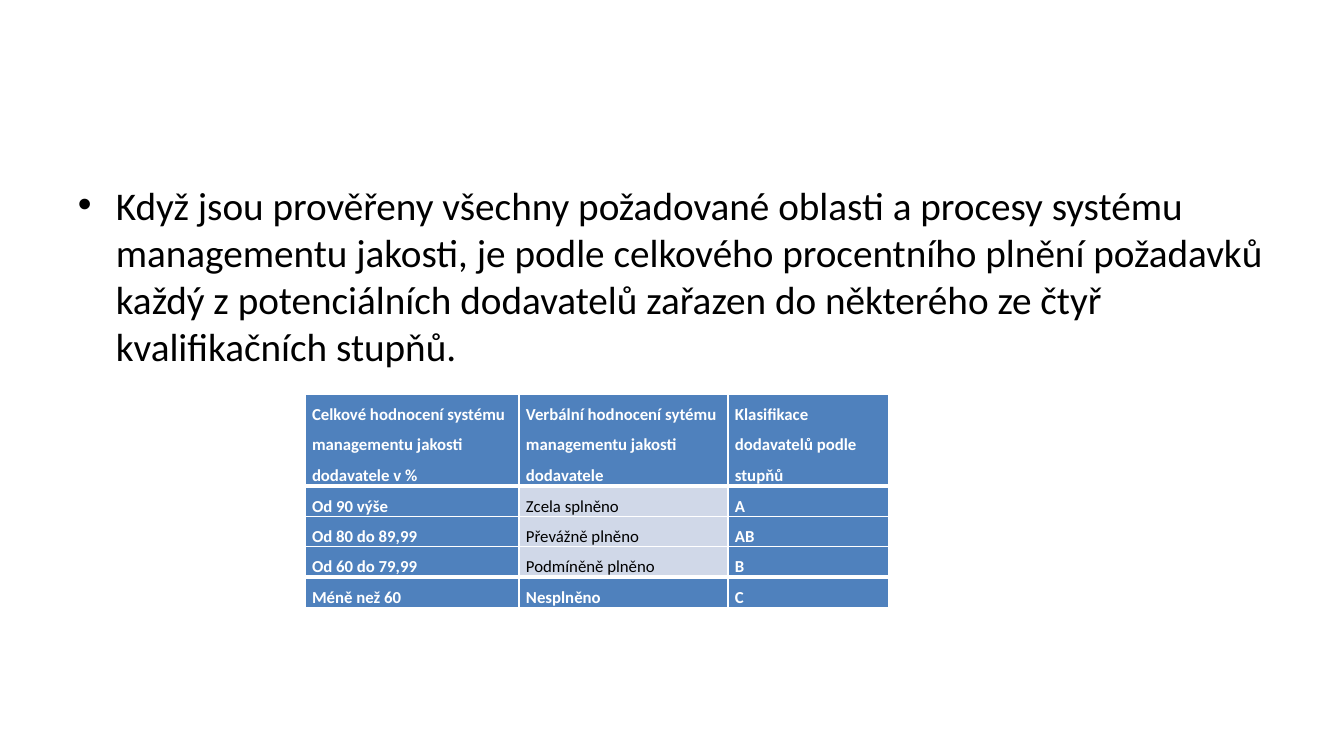
"""Build the slide on supplier rating with its table of four grades."""
from lxml import etree
from pptx import Presentation, util as u
from pptx.dml.color import RGBColor
from pptx.enum import text as t
from pptx.oxml import ns

PX = 914400 / 100.8
HUE = {"ink": "000000", "white": "FFFFFF", "blue": "4F81BD", "pale": "D0D8E8"}


def px(n):
    return u.Emu(round(n * PX))


def write(frame, words, size=12, hue="white", bold=False, line=None, after=0, bullet=None):
    frame.word_wrap = True
    para = frame.paragraphs[0]
    para.alignment = t.PP_ALIGN.LEFT
    para.space_after = u.Pt(after)
    if line:
        para.line_spacing = line
    if bullet:
        props = para._p.get_or_add_pPr()
        props.set("marL", str(px(38)))
        props.set("indent", str(-px(38)))
        font = etree.SubElement(props, ns.qn("a:buFont"))
        font.set("typeface", "Arial")
        etree.SubElement(props, ns.qn("a:buChar")).set("char", bullet)
    run = para.add_run()
    run.text = words
    run.font.name = "Calibri"
    run.font.size = u.Pt(size)
    run.font.bold = bold
    run.font.color.rgb = RGBColor.from_string(HUE[hue])


deck = Presentation()
deck.slide_width, deck.slide_height = px(1344), px(756)
slide = deck.slides.add_slide(deck.slide_layouts[6])

body = slide.shapes.add_textbox(px(68), px(176), px(1210), px(499))
write(
    body.text_frame,
    "Když jsou prověřeny všechny požadované oblasti a procesy systému "
    "managementu jakosti, je podle celkového procentního plnění požadavků "
    "každý z potenciálních dodavatelů zařazen do některého ze čtyř "
    "kvalifikačních stupňů.",
    size=28, hue="ink", bullet="•",
)

ROWS = [
    ("Celkové hodnocení systému managementu jakosti dodavatele v %",
     "Verbální hodnocení sytému managementu jakosti dodavatele",
     "Klasifikace dodavatelů podle stupňů"),
    ("Od 90 výše", "Zcela splněno", "A"),
    ("Od 80 do 89,99", "Převážně plněno", "AB"),
    ("Od 60 do 79,99", "Podmíněně plněno", "B"),
    ("Méně než 60", "Nesplněno", "C"),
]
WIDTHS = [214, 209, 161]
HEIGHTS = [92] + [30] * 4
last = len(ROWS) - 1

grid = slide.shapes.add_table(
    len(ROWS), len(WIDTHS), px(305), px(394), px(sum(WIDTHS)), px(sum(HEIGHTS))
).table
for col, wide in zip(grid.columns, WIDTHS):
    col.width = px(wide)

for i, (row, high) in enumerate(zip(ROWS, HEIGHTS)):
    grid.rows[i].height = px(high)
    top = 3 if i in (1, last) else 1
    base = 3 if i in (0, last - 1) else 1
    for j, words in enumerate(row):
        cell = grid.cell(i, j)
        cell.margin_left = cell.margin_right = px(7)
        cell.margin_top = cell.margin_bottom = 0
        inner = j == 1 and 0 < i < last
        write(cell.text_frame, words, hue="ink" if inner else "white",
              bold=not inner, line=1.5, after=10)
        props = cell._tc.get_or_add_tcPr()
        for side, wide in zip("LRTB", (1, 1, top, base)):
            edge = etree.SubElement(props, ns.qn("a:ln" + side))
            edge.set("w", str(u.Pt(wide)))
            fill = etree.SubElement(edge, ns.qn("a:solidFill"))
            etree.SubElement(fill, ns.qn("a:srgbClr")).set("val", HUE["white"])
        cell.fill.solid()
        cell.fill.fore_color.rgb = RGBColor.from_string(HUE["pale" if inner else "blue"])

deck.save("out.pptx")
